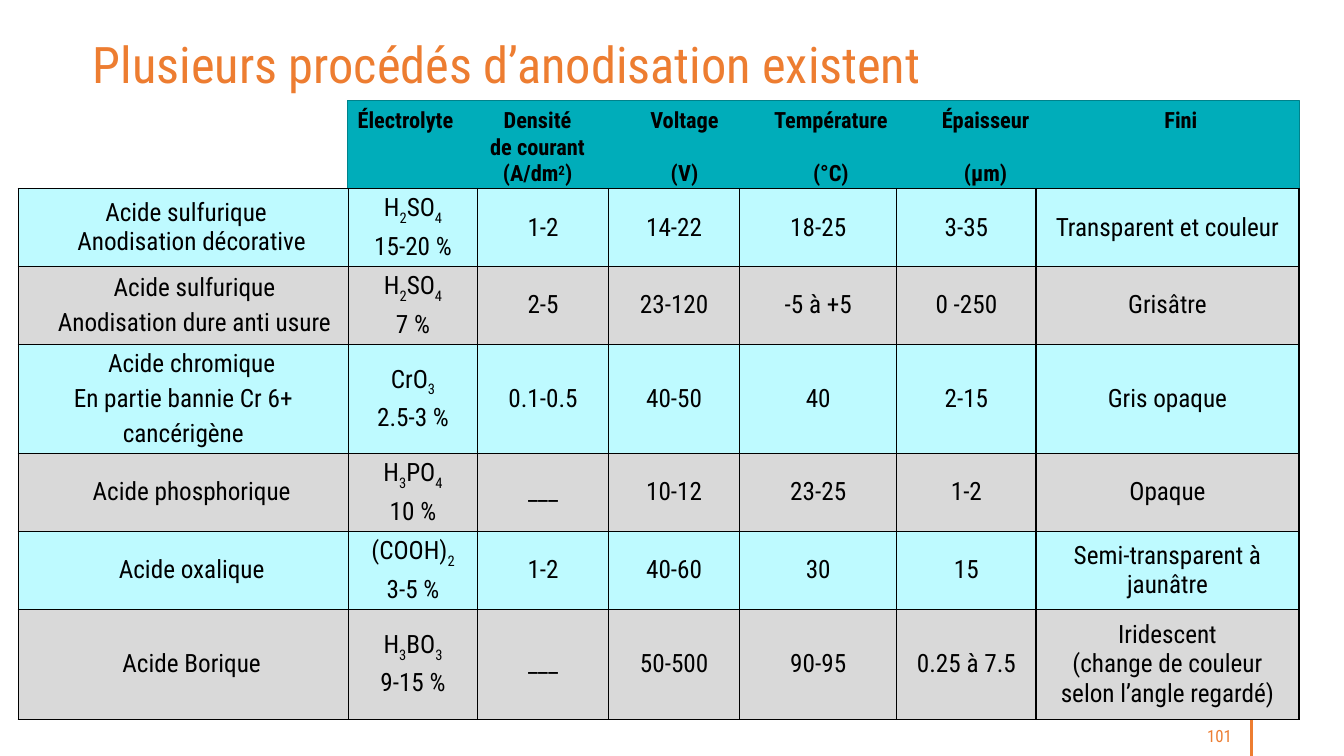
import itertools

import lxml.etree
import pptx
import pptx.dml.color
import pptx.enum.shapes
import pptx.enum.text
import pptx.oxml
import pptx.oxml.ns
import pptx.util

TITLE = "Plusieurs procédés d’anodisation existent"
PAGE_NUMBER = "101"
FONT = "Roboto Condensed"
COLORS = {
    "orange": "ED7D31",
    "teal": "00ADBA",
    "dark teal": "00828B",
    "cyan": "BEFAFF",
    "grey": "D9D9D9",
    "black": "000000",
}
HEADINGS = [
    ["Électrolyte", "Densité", "Voltage", "Température", "Épaisseur", "Fini"],
    ["", "de courant"],
    ["", "(A/dm2)", "(V)", "(°C)", "(µm)"],
]
HEADING_CENTERS = [128.5, 233.5, 338, 448.5, 588]

GAP = 3.6
PROCESSES = [
    ([("Acide sulfurique", 4, 0), ("Anodisation décorative", 12, 0)],
     "H2SO4", "15-20 %", ["1-2", "14-22", "18-25", "3-35"],
     ["Transparent et couleur"]),
    ([("Acide sulfurique", 16, 0), ("Anodisation dure anti usure", 16, GAP)],
     "H2SO4", "7 %", ["2-5", "23-120", "-5 à +5", "0 -250"],
     ["Grisâtre"]),
    ([("Acide chromique", 12, 0), ("En partie bannie Cr 6+", 0, GAP),
      ("cancérigène", 0, GAP)],
     "CrO3", "2.5-3 %", ["0.1-0.5", "40-50", "40", "2-15"],
     ["Gris opaque"]),
    ([("Acide phosphorique", 12, 0)],
     "H3PO4", "10 %", ["___", "10-12", "23-25", "1-2"],
     ["Opaque"]),
    ([("Acide oxalique", 12, 0)],
     "(COOH)2", "3-5 %", ["1-2", "40-60", "30", "15"],
     ["Semi-transparent à jaunâtre"]),
    ([("Acide Borique", 12, 0)],
     "H3BO3", "9-15 %", ["___", "50-500", "90-95", "0.25 à 7.5"],
     ["Iridescent", "(change de couleur selon l’angle regardé)"]),
]
COLUMN_WIDTHS = [236, 92.2, 93.6, 93.6, 112.3, 99.4, 187.9]
ROW_HEIGHTS = [55.7, 55.7, 77.9, 55.7, 55.7, 78.5]

TITLE_TEXT = {"size": 36, "color": "orange"}
NUMBER_TEXT = {"size": 12, "color": "orange"}
HEADING_TEXT = {"size": 16, "color": "black", "bold": True}
CELL_TEXT = {"size": 18, "color": "black"}

ALIGN = pptx.enum.text.PP_ALIGN
ANCHOR = pptx.enum.text.MSO_ANCHOR
CELL_FORMAT = {
    "vertical_anchor": ANCHOR.MIDDLE,
    "margin_top": pptx.util.Pt(2),
    "margin_bottom": pptx.util.Pt(2),
}


def points(*values):
    return [pptx.util.Pt(value) for value in values]


def color(name):
    return pptx.dml.color.RGBColor.from_string(COLORS[name])


def set_attributes(target, values):
    for name, value in values.items():
        setattr(target, name, value)


def add_text(paragraph, text, style, digit_baseline=0):
    pieces = [(False, text)]
    if digit_baseline:
        pieces = [(is_digit, "".join(letters))
                  for is_digit, letters in itertools.groupby(text, str.isdigit)]
    for is_digit, piece in pieces:
        run = paragraph.add_run()
        run.text = piece
        set_attributes(run.font, {"name": FONT, "size": pptx.util.Pt(style["size"]),
                                  "bold": style.get("bold", False)})
        run.font.color.rgb = color(style["color"])
        if is_digit:
            run.font._element.set("baseline", str(digit_baseline))


def paragraphs(frame, count):
    for _ in range(count - 1):
        frame.add_paragraph()
    return frame.paragraphs


def add_title(slide):
    title = slide.shapes.title
    set_attributes(title, dict(zip(("left", "top", "width", "height"),
                                   points(66.24, 28.8, 773.28, 45.36))))
    set_attributes(title.text_frame, {
        "margin_left": 0, "margin_top": 0, "margin_right": 0, "margin_bottom": 0,
        "word_wrap": True, "vertical_anchor": ANCHOR.TOP,
        "auto_size": pptx.enum.text.MSO_AUTO_SIZE.NONE})
    paragraph = title.text_frame.paragraphs[0]
    set_attributes(paragraph, {"alignment": ALIGN.LEFT, "line_spacing": 0.9})
    add_text(paragraph, TITLE, TITLE_TEXT)


def add_page_mark(slide):
    line = slide.shapes.add_connector(pptx.enum.shapes.MSO_CONNECTOR.STRAIGHT,
                                      *points(894.24, 540, 894.24, 500.4))
    line.line.color.rgb = color("orange")
    line.line.width = pptx.util.Pt(2.25)
    lxml.etree.SubElement(line._element.spPr, pptx.oxml.ns.qn("a:effectLst"))
    box = slide.shapes.add_textbox(*points(792, 511.2, 95.04, 28.8))
    set_attributes(box.text_frame, {"word_wrap": True, "vertical_anchor": ANCHOR.MIDDLE})
    paragraph = box.text_frame.paragraphs[0]
    paragraph.alignment = ALIGN.RIGHT
    add_text(paragraph, PAGE_NUMBER, NUMBER_TEXT)


def add_header(slide):
    header = slide.shapes.add_shape(pptx.enum.shapes.MSO_SHAPE.RECTANGLE,
                                    *points(248.4, 72, 679.68, 65.5))
    header.shadow.inherit = False
    header.fill.solid()
    header.fill.fore_color.rgb = color("teal")
    header.line.color.rgb = color("dark teal")
    header.line.width = pptx.util.Pt(0.75)
    set_attributes(header.text_frame, {"word_wrap": True, "vertical_anchor": ANCHOR.TOP})
    for paragraph, labels in zip(paragraphs(header.text_frame, len(HEADINGS)), HEADINGS):
        paragraph.alignment = ALIGN.LEFT
        properties = paragraph._p.get_or_add_pPr()
        tabs = lxml.etree.SubElement(properties, pptx.oxml.ns.qn("a:tabLst"))
        for center in HEADING_CENTERS:
            lxml.etree.SubElement(tabs, pptx.oxml.ns.qn("a:tab"),
                                  pos=str(pptx.util.Pt(center)), algn="ctr")
        add_text(paragraph, "\t".join(labels), HEADING_TEXT, 30000)


def add_borders(cell):
    properties = cell._tc.get_or_add_tcPr()
    for index, side in enumerate(("lnL", "lnR", "lnT", "lnB")):
        properties.insert(index, pptx.oxml.parse_xml(
            f'<a:{side} {pptx.oxml.ns.nsdecls("a")} w="12700"><a:solidFill>'
            f'<a:srgbClr val="{COLORS["black"]}"/></a:solidFill></a:{side}>'))


def fill_cell(cell, lines, fill):
    set_attributes(cell, CELL_FORMAT)
    cell.fill.solid()
    cell.fill.fore_color.rgb = color(fill)
    add_borders(cell)
    for paragraph, line in zip(paragraphs(cell.text_frame, len(lines)), lines):
        text, indent, gap, baseline = line
        paragraph.alignment = ALIGN.CENTER
        if gap:
            paragraph.space_before = pptx.util.Pt(gap)
        if indent:
            paragraph._p.get_or_add_pPr().set("marL", str(pptx.util.Pt(indent)))
        add_text(paragraph, text, CELL_TEXT, baseline)


def add_process_table(slide):
    table = slide.shapes.add_table(
        len(PROCESSES), len(COLUMN_WIDTHS),
        *points(12.96, 134.64, sum(COLUMN_WIDTHS), sum(ROW_HEIGHTS))).table
    set_attributes(table, {"first_row": False, "horz_banding": False})
    for column, width in zip(table.columns, COLUMN_WIDTHS):
        column.width = pptx.util.Pt(width)
    for index, process in enumerate(PROCESSES):
        row = table.rows[index]
        row.height = pptx.util.Pt(ROW_HEIGHTS[index])
        names, formula, concentration, values, finish = process
        contents = [
            [(*name, 0) for name in names],
            [(formula, 0, 0, -25000), (concentration, 0, GAP, 0)],
            *[[(value, 0, 0, 0)] for value in values],
            [(text, 0, 0, 0) for text in finish],
        ]
        for cell, lines in zip(row.cells, contents):
            fill_cell(cell, lines, ("cyan", "grey")[index % 2])


def main():
    presentation = pptx.Presentation()
    presentation.slide_width, presentation.slide_height = points(960, 540)
    slide = presentation.slides.add_slide(presentation.slide_layouts[5])
    add_title(slide)
    add_page_mark(slide)
    add_header(slide)
    add_process_table(slide)
    presentation.save("out.pptx")


if __name__ == "__main__":
    main()
